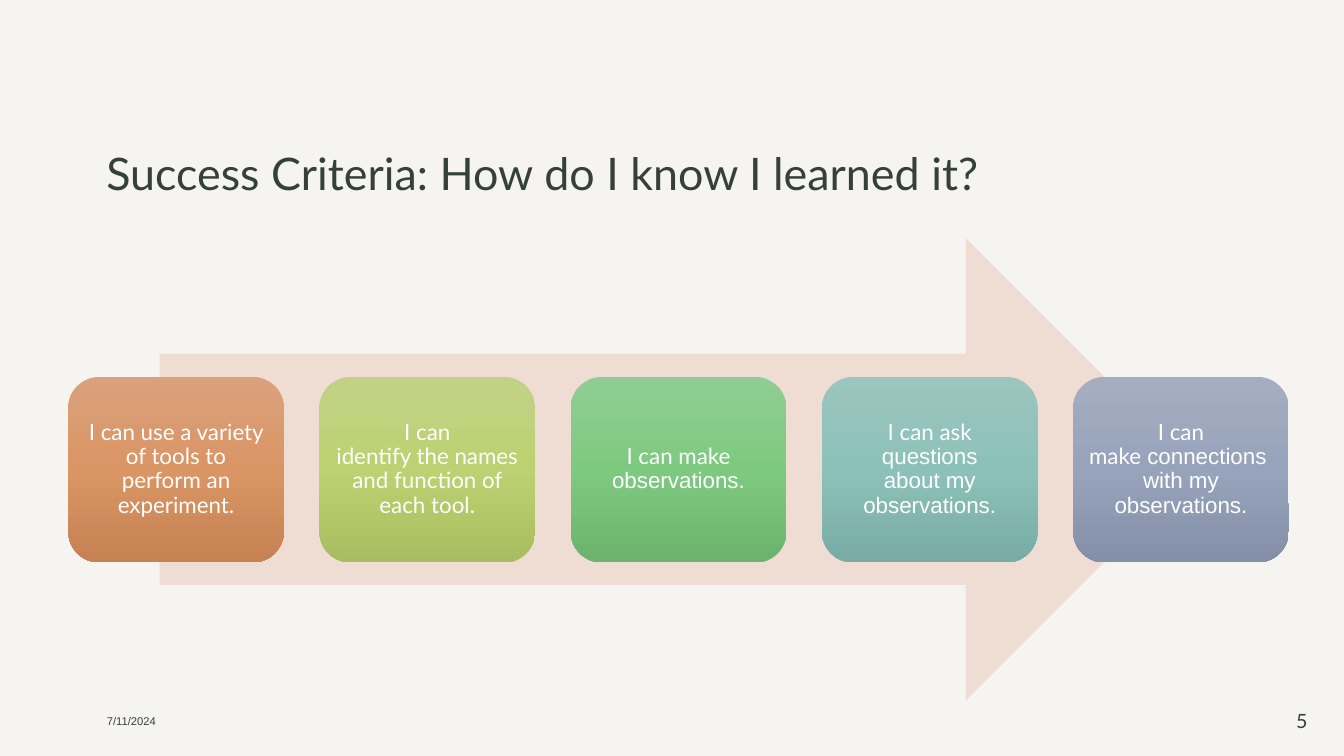
from copy import deepcopy

from pptx import Presentation
from pptx.dml.color import RGBColor
from pptx.enum.shapes import MSO_SHAPE
from pptx.enum.text import MSO_ANCHOR, MSO_AUTO_SIZE, PP_ALIGN
from pptx.util import Pt

# A tilde stands for a space that does not break.
CARDS = [
    (("DAA17D", "DA9564", "C68253"),
     [("I can use a variety of tools~to perform an experiment.", "Lato")]),
    (("C1D286", "BCD171", "A7BD5F"),
     [("I can identify~the~names and function of each tool.", "Lato")]),
    (("90CD93", "7EC980", "6CB46D"),
     [("I can make", "Lato"), (" observations.", "Arial")]),
    (("9BC5BF", "8CC1B9", "78ACA5"),
     [("I can ask", "Lato"), (" questions about~my observations.", "Arial")]),
    (("A5AEC1", "97A3BB", "8390A7"),
     [("I can make", "Lato"), ("~connections~with~my observations.", "Arial")]),
]
CARD_LEFT, CARD_TOP, CARD_STEP = 48.75, 269.25, 179.45
CARD_WIDTH, CARD_HEIGHT = 154, 132.5


def rgb(value):
    return RGBColor.from_string(value)


def tied(text):
    """Turn each tilde into a non-breaking space."""
    return text.replace("~", chr(160))


class SlideBuilder:
    """Holds the text style and the slide being built."""

    ink = "35403A"

    def __init__(self, slide):
        self.slide = slide

    def background(self, color):
        fill = self.slide.background.fill
        fill.solid()
        fill.fore_color.rgb = rgb(color)

    def format(self, p, size, font=None, color=None, align=PP_ALIGN.LEFT):
        p.alignment = align
        p.font.size = Pt(size)
        p.font.color.rgb = rgb(color or self.ink)
        if font:
            p.font.name = font

    def title(self, text, left, top, width, height):
        sp = self.slide.shapes.title
        sp.left, sp.top, sp.width, sp.height = map(Pt, (left, top, width, height))
        tf = sp.text_frame
        tf.text = tied(text)
        tf.auto_size = MSO_AUTO_SIZE.NONE
        tf.vertical_anchor = MSO_ANCHOR.BOTTOM
        self.format(tf.paragraphs[0], 32, "Lato")

    def label(self, text, left, top, width, height, size, font, align=PP_ALIGN.LEFT):
        sp = self.slide.shapes.add_textbox(*map(Pt, (left, top, width, height)))
        tf = sp.text_frame
        tf.word_wrap = True
        tf.vertical_anchor = MSO_ANCHOR.MIDDLE
        tf.text = text
        self.format(tf.paragraphs[0], size, font, align=align)

    def shape(self, kind, left, top, width, height):
        sp = self.slide.shapes.add_shape(kind, *map(Pt, (left, top, width, height)))
        sp.shadow.inherit = False
        sp.line.fill.background()
        return sp

    def arrow(self, left, top, width, height, color):
        sp = self.shape(MSO_SHAPE.RIGHT_ARROW, left, top, width, height)
        sp.fill.solid()
        sp.fill.fore_color.rgb = rgb(color)

    def gradient(self, fill, colors):
        """Fill from top to bottom through three evenly spaced colours."""
        fill.gradient()
        fill.gradient_angle = 270
        first = fill._fill._gradFill.gsLst[0]
        first.addnext(deepcopy(first))
        for i, (stop, color) in enumerate(zip(fill.gradient_stops, colors)):
            stop.position = i / 2
            stop.color.rgb = rgb(color)

    def card(self, left, top, width, height, colors, runs):
        sp = self.shape(MSO_SHAPE.ROUNDED_RECTANGLE, left, top, width, height)
        self.gradient(sp.fill, colors)
        tf = sp.text_frame
        tf.word_wrap = True
        tf.vertical_anchor = MSO_ANCHOR.MIDDLE
        tf.margin_left = tf.margin_right = tf.margin_top = tf.margin_bottom = Pt(4.8)
        p = tf.paragraphs[0]
        p.line_spacing = 0.9
        self.format(p, 16, color="FFFFFF", align=PP_ALIGN.CENTER)
        for text, font in runs:
            r = p.add_run()
            r.text = tied(text)
            r.font.name = font


def main():
    prs = Presentation()
    prs.slide_width, prs.slide_height = Pt(960), Pt(540)
    builder = SlideBuilder(prs.slides.add_slide(prs.slide_layouts[5]))
    builder.background("F5F4F1")
    builder.title("Success~Criteria:~How do I know I learned it?", 68.75, 46.5, 823, 99.5)
    builder.label("7/11/2024", 69.25, 500.5, 216, 29, 8, "Arial")
    builder.label("5", 900, 500.5, 41, 29, 14, "Lato", PP_ALIGN.RIGHT)
    builder.arrow(114, 170, 741, 330.5, "EFDCD3")
    for i, (colors, runs) in enumerate(CARDS):
        builder.card(CARD_LEFT + i * CARD_STEP, CARD_TOP, CARD_WIDTH, CARD_HEIGHT,
                     colors, runs)
    prs.save("out.pptx")


if __name__ == "__main__":
    main()
